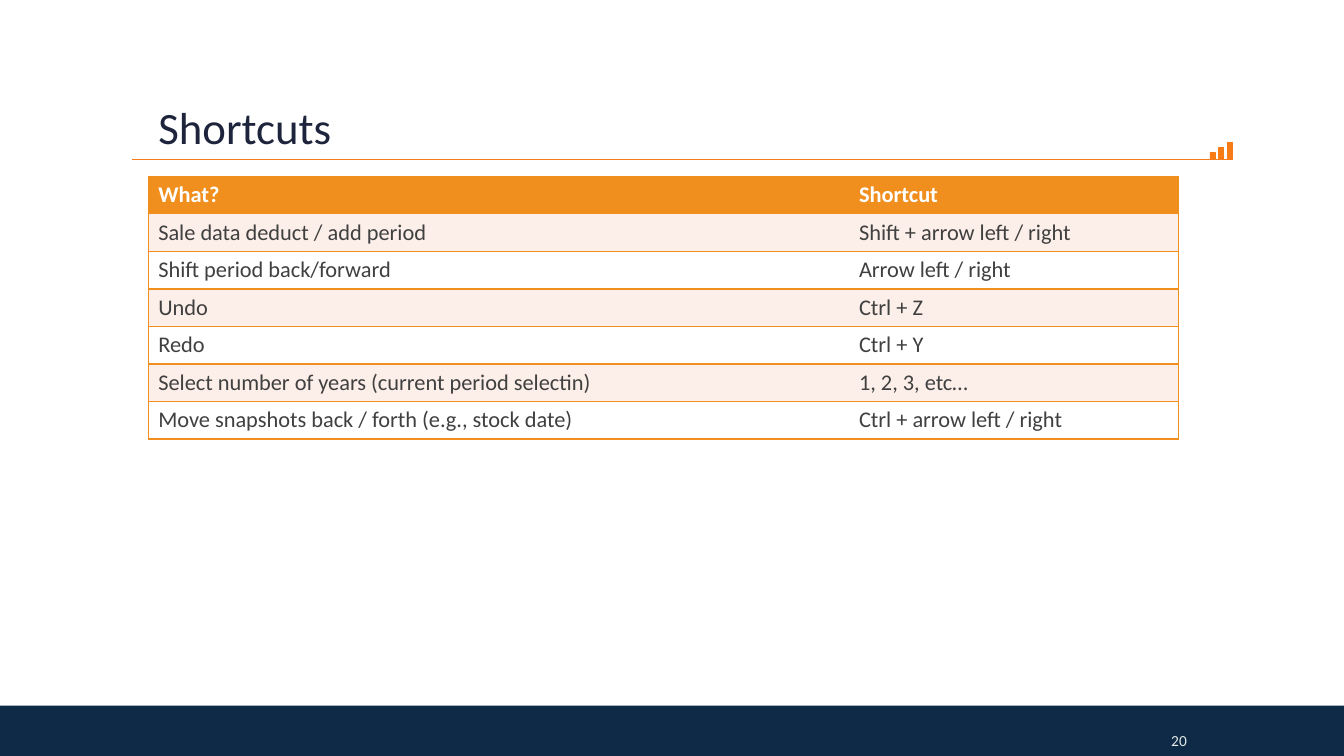
from lxml.etree import SubElement
from pptx import Presentation
from pptx.dml.color import RGBColor
from pptx.enum.shapes import MSO_CONNECTOR as CONNECTOR, MSO_SHAPE as SHAPE
from pptx.enum.text import MSO_ANCHOR as ANCHOR, MSO_AUTO_SIZE as AUTO_SIZE, PP_ALIGN as ALIGN
from pptx.oxml.ns import qn
from pptx.util import Inches, Pt

NAVY = RGBColor(0x0E, 0x2A, 0x46)
ORANGE = RGBColor(0xF8, 0x7C, 0x16)
AMBER = RGBColor(0xF0, 0x8F, 0x1E)
PEACH = RGBColor(0xFC, 0xEE, 0xE8)
WHITE = RGBColor(0xFF, 0xFF, 0xFF)
TITLE_INK = RGBColor(0x1D, 0x24, 0x3C)
BODY_INK = RGBColor(0x40, 0x40, 0x40)
NUMBER_INK = RGBColor(0xE5, 0xE8, 0xE8)

SHORTCUTS = [
    ("What?", "Shortcut"),
    ("Sale data deduct / add period", "Shift + arrow left / right"),
    ("Shift period back/forward", "Arrow left / right"),
    ("Undo", "Ctrl + Z"),
    ("Redo", "Ctrl + Y"),
    ("Select number of years (current period selectin)", "1, 2, 3, etc…"),
    ("Move snapshots back / forth (e.g., stock date)", "Ctrl + arrow left / right"),
]


class SlideBuilder:
    """Draws styled elements on one slide."""

    font_name = "Calibri"

    def __init__(self, page):
        self.page = page

    def add_text(self, frame, text, size, color, bold=False, align=ALIGN.LEFT):
        para = frame.paragraphs[0]
        para.alignment = align
        span = para.add_run()
        span.text = text
        span.font.name = self.font_name
        span.font.size = Pt(size)
        span.font.bold = bold
        span.font.color.rgb = color
        return para

    def title(self, text, left, top, width, height):
        box = self.page.shapes.title
        box.left, box.top = Inches(left), Inches(top)
        box.width, box.height = Inches(width), Inches(height)
        frame = box.text_frame
        frame.auto_size = AUTO_SIZE.NONE
        frame.vertical_anchor = ANCHOR.BOTTOM
        self.add_text(frame, text, 32, TITLE_INK).line_spacing = 0.9

    def bar(self, left, top, width, height, color, outline=0):
        box = self.page.shapes.add_shape(
            SHAPE.RECTANGLE, Inches(left), Inches(top), Inches(width), Inches(height))
        box.shadow.inherit = False
        box.fill.solid()
        box.fill.fore_color.rgb = color
        if outline:
            box.line.color.rgb = color
            box.line.width = Pt(outline)
        else:
            box.line.fill.background()

    def rule(self, left, right, top, color):
        line = self.page.shapes.add_connector(
            CONNECTOR.STRAIGHT, Inches(left), Inches(top), Inches(right), Inches(top))
        line.line.color.rgb = color
        line.line.width = Pt(1)
        SubElement(line._element.spPr, qn("a:effectLst"))

    def number(self, text, left, top, width, height):
        box = self.page.shapes.add_textbox(
            Inches(left), Inches(top), Inches(width), Inches(height))
        frame = box.text_frame
        frame.word_wrap = True
        frame.vertical_anchor = ANCHOR.MIDDLE
        self.add_text(frame, text, 11, NUMBER_INK, align=ALIGN.RIGHT)

    def border(self, cell, open_side):
        properties = cell._tc.get_or_add_tcPr()
        for side in ("L", "R", "T", "B"):
            edge = SubElement(properties, qn(f"a:ln{side}"), w=str(Pt(1)))
            if side == open_side:
                SubElement(edge, qn("a:noFill"))
            else:
                paint = SubElement(edge, qn("a:solidFill"))
                SubElement(paint, qn("a:srgbClr"), val=str(AMBER))

    def table(self, rows, left, top, widths, row_height):
        grid = self.page.shapes.add_table(
            len(rows), len(widths), Inches(left), Inches(top),
            Inches(sum(widths)), Inches(row_height * len(rows))).table
        for column, width in zip(grid.columns, widths):
            column.width = Inches(width)
        for row_index, texts in enumerate(rows):
            grid.rows[row_index].height = Inches(row_height)
            header = row_index == 0
            fill = AMBER if header else (WHITE, PEACH)[row_index % 2]
            for column_index, text in enumerate(texts):
                cell = grid.cell(row_index, column_index)
                self.border(cell, "RL"[column_index])
                cell.fill.solid()
                cell.fill.fore_color.rgb = fill
                self.add_text(cell.text_frame, text, 16, WHITE if header else BODY_INK, header)


def main():
    deck = Presentation()
    deck.slide_width, deck.slide_height = Inches(13.33), Inches(7.5)
    builder = SlideBuilder(deck.slides.add_slide(deck.slide_layouts[5]))
    builder.bar(0, 7, 13.33, 0.5, NAVY)
    builder.rule(1.31, 12.21, 1.58, ORANGE)
    for index, height in enumerate((0.07, 0.12, 0.17)):
        builder.bar(12 + 0.085 * index, 1.58 - height, 0.05, height, ORANGE, 0.25)
    builder.title("Shortcuts", 1.47, 0.51, 10.4, 1.07)
    builder.table(SHORTCUTS, 1.47, 1.75, (6.95, 3.27), 0.37)
    builder.number("20", 11.17, 7.22, 0.7, 0.26)
    deck.save("out.pptx")


if __name__ == "__main__":
    main()
